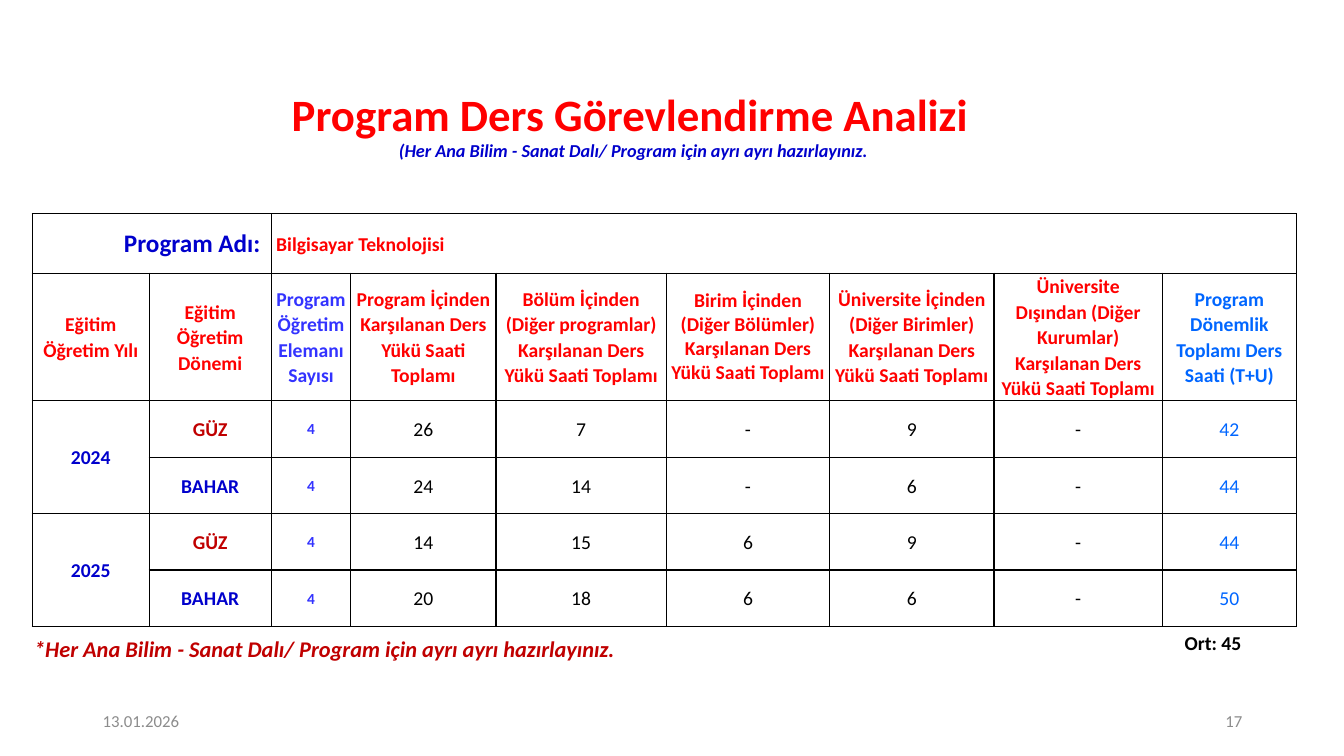
from lxml.etree import SubElement as Sub
from pptx import Presentation
from pptx.dml.color import RGBColor as RGB
from pptx.enum.text import MSO_ANCHOR as Anchor, MSO_AUTO_SIZE as Auto, PP_ALIGN as Align
from pptx.oxml.ns import qn
from pptx.util import Inches, Pt

COLORS = {
    "red": "FF0000", "navy": "0000CC", "violet": "3333FF", "blue": "0066FF",
    "wine": "C00000", "black": "000000", "gray": "8C8C8C",
}
WIDTHS = [1.16, 1.21, 0.79, 1.44, 1.69, 1.62, 1.63, 1.67, 1.33]
HEIGHTS = [0.59, 1.23] + [0.56] * 4
HEADS = [
    "Eğitim Öğretim Yılı",
    "Eğitim Öğretim Dönemi",
    "Program Öğretim Elemanı Sayısı",
    "Program İçinden Karşılanan Ders Yükü Saati Toplamı",
    "Bölüm İçinden (Diğer programlar) Karşılanan Ders Yükü Saati Toplamı",
    "Birim İçinden (Diğer Bölümler) Karşılanan Ders Yükü Saati Toplamı",
    "Üniversite İçinden (Diğer Birimler) Karşılanan Ders Yükü Saati Toplamı",
    "Üniversite Dışından (Diğer Kurumlar) Karşılanan Ders Yükü Saati Toplamı",
    "Program Dönemlik Toplamı Ders Saati (T+U)",
]
HEAD_COLORS = {2: "violet", 8: "blue"}
TERMS = {"GÜZ": "wine", "BAHAR": "navy"}
YEARS = ["2024", "2025"]
LOADS = [
    ["4", "26", "7", "-", "9", "-", "42"],
    ["4", "24", "14", "-", "6", "-", "44"],
    ["4", "14", "15", "6", "9", "-", "44"],
    ["4", "20", "18", "6", "6", "-", "50"],
]


class Deck:
    def __init__(self):
        self.prs = Presentation()
        self.prs.slide_width, self.prs.slide_height = Inches(13.33), Inches(7.5)
        self.slide = self.prs.slides.add_slide(self.prs.slide_layouts[6])
        self.face = "Calibri"

    def style(self, font, size, color, bold=False, italic=False):
        font.name, font.size = self.face, Pt(size)
        font.bold, font.italic = bold, italic
        font.color.rgb = RGB.from_string(COLORS[color])

    def box(self, x, y, w, h, anchor=Anchor.TOP, wrap=True, fit=Auto.NONE):
        box = self.slide.shapes.add_textbox(*map(Inches, (x, y, w, h)))
        frame = box.text_frame
        frame.word_wrap, frame.auto_size = wrap, fit
        frame.vertical_anchor = anchor
        return frame.paragraphs[0]

    def text(self, place, text, size, color, align=Align.LEFT, bold=False,
             italic=False, **opts):
        par = self.box(*place, **opts)
        par.text, par.alignment = text, align
        self.style(par.font, size, color, bold, italic)

    def title(self, place, main, sub):
        par = self.box(*place, anchor=Anchor.MIDDLE)
        par.alignment, par.line_spacing = Align.CENTER, 0.9
        run = par.add_run()
        run.text = main
        self.style(run.font, 32, "red", True)
        par.add_line_break()
        run = par.add_run()
        run.text = sub
        self.style(run.font, 13, "navy", True, True)

    def grid(self, x, y, widths, heights):
        """Add an unfilled table with thin black borders."""
        frame = self.slide.shapes.add_table(
            len(heights), len(widths), Inches(x), Inches(y),
            Inches(sum(widths)), Inches(sum(heights)))
        table = frame.table
        table.first_row = table.horz_banding = False
        for col, width in zip(table.columns, widths):
            col.width = Inches(width)
        for row, height in zip(table.rows, heights):
            row.height = Inches(height)
        for cell in table.iter_cells():
            cell.margin_left = cell.margin_right = Inches(0.05)
            cell.margin_top = cell.margin_bottom = 0
            cell.vertical_anchor = Anchor.MIDDLE
            self.frame(cell)
            cell.fill.background()
        return table

    def frame(self, cell):
        props = cell._tc.get_or_add_tcPr()
        for side in ("a:lnL", "a:lnR", "a:lnT", "a:lnB"):
            line = Sub(props, qn(side), w=str(Pt(1)))
            fill = Sub(line, qn("a:solidFill"))
            Sub(fill, qn("a:srgbClr"), val=COLORS["black"])

    def cell(self, cell, text, color, size=14, bold=True, align=Align.CENTER,
             space=1.07):
        par = cell.text_frame.paragraphs[0]
        par.text, par.alignment, par.line_spacing = text, align, space
        self.style(par.font, size, color, bold)


def main():
    deck = Deck()
    deck.title((0.73, 0.86, 11.14, 0.8), "Program Ders Görevlendirme Analizi ",
               "(Her Ana Bilim - Sanat Dalı/ Program için ayrı ayrı hazırlayınız. ")
    deck.text((0.92, 6.95, 3, 0.4), "13.01.2026", 12, "gray", anchor=Anchor.MIDDLE)
    deck.text((9.42, 6.95, 3, 0.4), "17", 12, "gray", Align.RIGHT,
              anchor=Anchor.MIDDLE)

    table = deck.grid(0.32, 2.12, WIDTHS, HEIGHTS)
    at = table.cell
    at(0, 0).merge(at(0, 1))
    at(0, 2).merge(at(0, 8))
    deck.cell(at(0, 0), "Program Adı: ", "navy", 18, align=Align.RIGHT, space=1.0)
    deck.cell(at(0, 2), "Bilgisayar Teknolojisi", "red", align=Align.LEFT)
    for col, head in enumerate(HEADS):
        deck.cell(at(1, col), head, HEAD_COLORS.get(col, "red"),
                  space=1.0 if col == 5 else 1.07)
    for i, year in enumerate(YEARS):
        top = 2 + 2 * i
        at(top, 0).merge(at(top + 1, 0))
        deck.cell(at(top, 0), year, "navy")
        for row, (term, color) in enumerate(TERMS.items(), top):
            deck.cell(at(row, 1), term, color)
    for row, loads in enumerate(LOADS, 2):
        for col, load in enumerate(loads, 2):
            staff = col == 2
            deck.cell(at(row, col), load, HEAD_COLORS.get(col, "black"),
                      11 if staff else 14, staff)

    deck.text((0.24, 6.25, 8.48, 0.37),
              "*Her Ana Bilim - Sanat Dalı/ Program için ayrı ayrı hazırlayınız.",
              16, "wine", bold=True, italic=True, fit=Auto.SHAPE_TO_FIT_TEXT)
    deck.text((11.65, 6.21, 0.77, 0.34), "Ort: 45", 14, "black", bold=True,
              wrap=False, fit=Auto.SHAPE_TO_FIT_TEXT)
    deck.prs.save("out.pptx")


if __name__ == "__main__":
    main()
